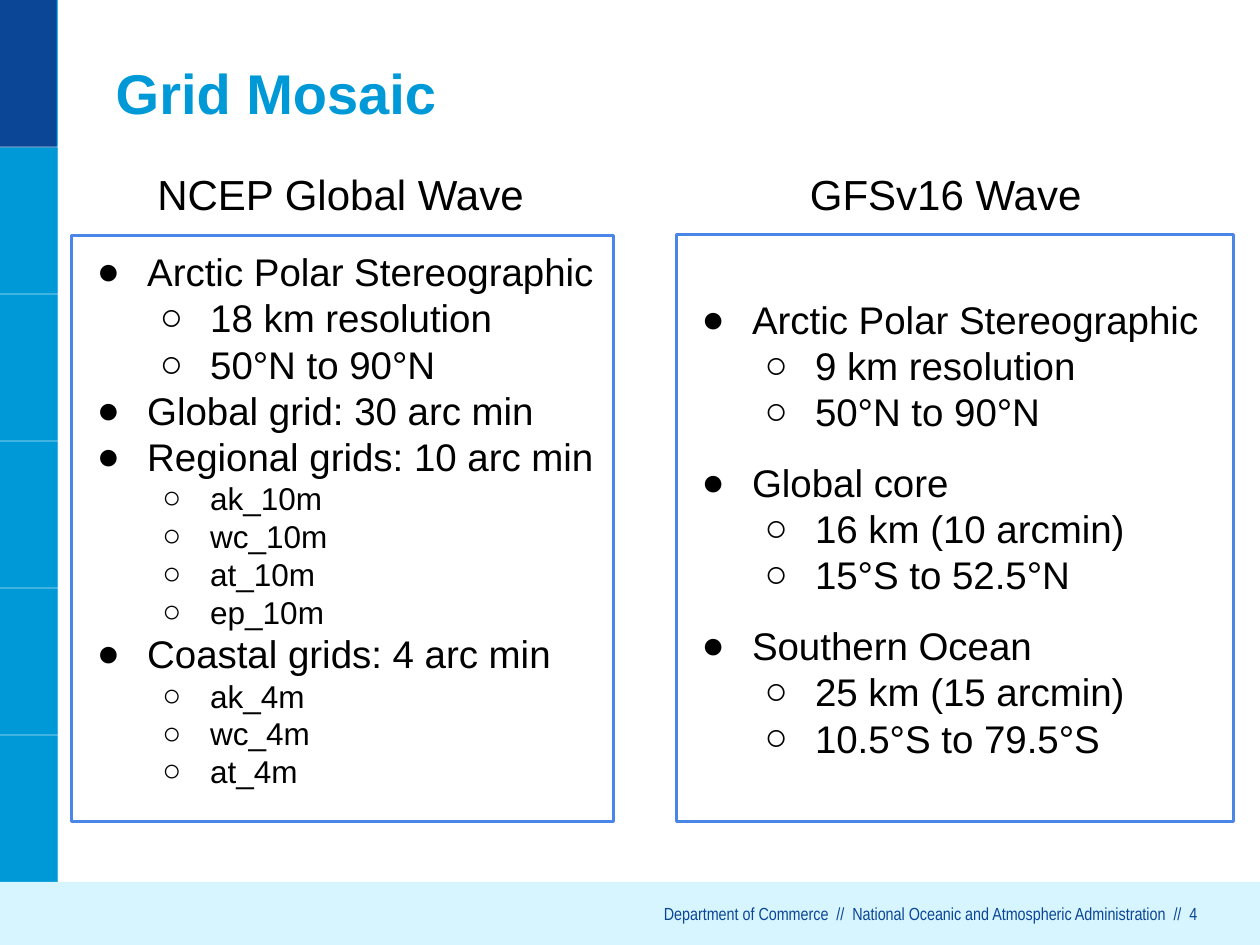
import pptx
import pptx.util
import pptx.dml.color
import pptx.enum.shapes
import pptx.enum.text
import pptx.oxml.ns
from lxml import etree

Inches, Pt = pptx.util.Inches, pptx.util.Pt
qn = pptx.oxml.ns.qn
align = pptx.enum.text.PP_ALIGN
anchor = pptx.enum.text.MSO_ANCHOR


def color(value):
    return pptx.dml.color.RGBColor.from_string(value)


def style(frame, inset, top):
    frame.word_wrap = True
    frame.margin_left = frame.margin_right = Inches(inset)
    frame.margin_top = frame.margin_bottom = Inches(top)
    frame.vertical_anchor = anchor.TOP


deck = pptx.Presentation()
deck.slide_width, deck.slide_height = Inches(10), Inches(7.5)
slide = deck.slides.add_slide(deck.slide_layouts[6])
shapes = slide.shapes
rect = pptx.enum.shapes.MSO_SHAPE.RECTANGLE

# Side band, its dark top and the footer bar
bands = [
    (0, 0, 0.46, 7.5, "0099D8"),
    (0, 0, 0.45, 1.17, "0B4596"),
    (0, 7, 10, 0.5, "D6F5FF"),
]
for left, top, width, height, fill in bands:
    band = shapes.add_shape(rect, Inches(left), Inches(top), Inches(width), Inches(height))
    band.shadow.inherit = False
    band.fill.solid()
    band.fill.fore_color.rgb = color(fill)
    band.line.fill.background()

# Faint white rules across the side band and down its edge
rules = [(0, 7 * i / 6, 0.46, 7 * i / 6) for i in range(1, 6)] + [(0.46, 0, 0.46, 7)]
for ends in rules:
    rule = shapes.add_connector(
        pptx.enum.shapes.MSO_CONNECTOR.STRAIGHT, *[Inches(end) for end in ends])
    rule.line.width = Pt(0.75)
    rule.line.color.rgb = color("FFFFFF")
    tint = rule.line.fill._xPr.find(".//" + qn("a:srgbClr"))
    etree.SubElement(tint, qn("a:alpha"), val="40000")
    etree.SubElement(rule._element.spPr, qn("a:effectLst"))

# Title, column heads and footer
footer = "Department of Commerce  //  National Oceanic and Atmospheric Administration  //  4"
labels = [
    ("Grid Mosaic", 0.82, 0.3, 2.92, 0.87, 0.1, 32, "Arial", "0099D8"),
    ("NCEP Global Wave", 1.15, 1.24, 3.14, 0.62, 0.1, 24, "Arial", "000000"),
    ("GFSv16 Wave", 6.33, 1.24, 2.49, 0.62, 0.1, 24, "Arial", "000000"),
    (footer, 1.58, 7.17, 7.92, 0.17, 0, 10, "Arial Narrow", "0B4596"),
]
for text, left, top, width, height, inset, size, font, ink in labels:
    box = shapes.add_textbox(Inches(left), Inches(top), Inches(width), Inches(height))
    style(box.text_frame, inset, inset)
    para = box.text_frame.paragraphs[0]
    para.text = text
    para.font.size, para.font.name = Pt(size), font
    para.font.color.rgb = color(ink)
    if size == 32:
        para.font.bold = True
        box.text_frame.vertical_anchor = anchor.MIDDLE
    if text == footer:
        para.alignment = align.RIGHT

# Grid lists: each group is a head, the size of its items, and the items
global_wave = [
    ("Arctic Polar Stereographic", 22, ["18 km resolution", "50°N to 90°N"]),
    ("Global grid: 30 arc min", 22, []),
    ("Regional grids: 10 arc min", 18, ["ak_10m", "wc_10m", "at_10m", "ep_10m"]),
    ("Coastal grids: 4 arc min", 18, ["ak_4m", "wc_4m", "at_4m"]),
]
gfs_wave = [
    ("Arctic Polar Stereographic", 22, ["9 km resolution", "50°N to 90°N"]),
    ("Global core", 22, ["16 km (10 arcmin)", "15°S to 52.5°N"]),
    ("Southern Ocean", 22, ["25 km (15 arcmin)", "10.5°S to 79.5°S"]),
]
panels = [
    (0.57, 1.87, 4.3, 4.65, 0.1, 0, global_wave),
    (5.37, 1.86, 4.42, 4.66, 0.49, 14, gfs_wave),
]
for left, top, width, height, inset, gap, groups in panels:
    panel = shapes.add_shape(rect, Inches(left), Inches(top), Inches(width), Inches(height))
    panel.shadow.inherit = False
    panel.fill.background()
    panel.line.color.rgb = color("4A86E8")
    panel.line.width = Pt(1.5)
    frame = panel.text_frame
    style(frame, 0.1, inset)
    frame.margin_bottom = Inches(0.05)

    rows = []
    for head, small, items in groups:
        rows.append((head, 0, 22, gap if rows else 0))
        rows += [(item, 1, small, 0) for item in items]
    for i, (text, level, size, before) in enumerate(rows):
        para = frame.paragraphs[0] if i == 0 else frame.add_paragraph()
        para.text = text
        para.level = level
        para.alignment = align.LEFT
        para.space_before = Pt(before)
        props = para._p.get_or_add_pPr()
        props.set("marL", str(Inches(0.5 + 0.5 * level)))
        props.set("indent", str(-Inches(0.38 if size == 18 else 0.4)))
        tint = etree.SubElement(props, qn("a:buClr"))
        etree.SubElement(tint, qn("a:srgbClr"), val="000000")
        etree.SubElement(props, qn("a:buSzPct"), val="100000")
        etree.SubElement(props, qn("a:buFont"), typeface="Arial")
        etree.SubElement(props, qn("a:buChar"), char="●○"[level])
        para.font.size, para.font.name = Pt(size), "Arial"
        para.font.color.rgb = color("000000")

deck.save("out.pptx")
